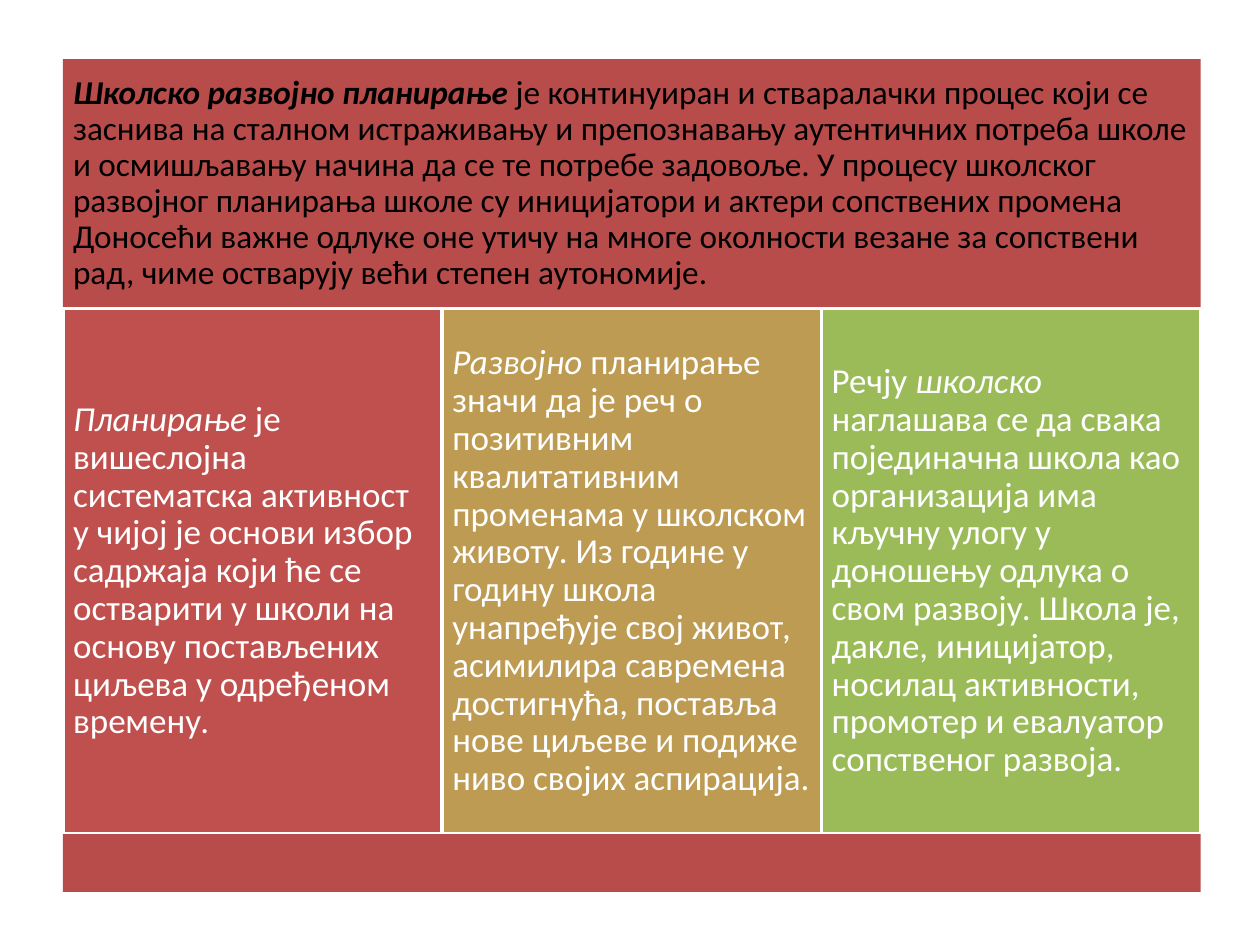
from pptx import Presentation
from pptx import util as u
from pptx.dml.color import RGBColor
from pptx.enum import shapes, text

BRICK = RGBColor(0xB7, 0x4C, 0x4A)
RED = RGBColor(0xC0, 0x50, 0x4D)
OCHRE = RGBColor(0xBD, 0x9B, 0x53)
GREEN = RGBColor(0x9B, 0xBB, 0x59)
WHITE = RGBColor(0xFF, 0xFF, 0xFF)
BLACK = RGBColor(0, 0, 0)

LEFT, TOP = 0.5, 0.47
COLUMN_WIDTH, COLUMN_HEIGHT = 3.01, 4.17
HEADER_HEIGHT, FOOTER_HEIGHT = 1.98, 0.46
PLAIN, ITALIC = {}, {"italic": True}
BOLD_ITALIC = {"bold": True, "italic": True}

DEFINITION = [
    ("Школско развојно планирање ", BOLD_ITALIC),
    ("је континуиран и стваралачки процес који се заснива на сталном "
     "истраживању и препознавању аутентичних потреба школе и осмишљавању "
     "начина да се те потребе задовоље. У процесу школског развојног "
     "планирања школе су иницијатори и актери сопствених промена Доносећи "
     "важне одлуке оне утичу на многе околности везане за сопствени рад, "
     "чиме остварују већи степен аутономије.", PLAIN),
]
TERMS = [
    (RED, [
        ("Планирање", ITALIC),
        (" је вишеслојна систематска активност у чијој је основи избор "
         "садржаја који ће се остварити у школи на основу постављених "
         "циљева у одређеном времену.", PLAIN)]),
    (OCHRE, [
        ("Развојно ", ITALIC),
        ("планирање значи да је реч о позитивним квалитативним променама у "
         "школском животу. Из године у годину школа унапређује свој живот, "
         "асимилира савремена достигнућа, поставља нове циљеве и подиже "
         "ниво својих аспирација.", PLAIN)]),
    (GREEN, [
        ("Речју ", PLAIN),
        ("школско ", ITALIC),
        ("наглашава се да свака појединачна школа као организација има "
         "кључну улогу у доношењу одлука о свом развоју. Школа је, дакле, "
         "иницијатор, носилац активности, промотер и евалуатор сопственог "
         "развоја.", PLAIN)]),
]


class PlanSlide:
    """Holds the text style and the current slide, and draws its panels."""

    font = {"name": "Calibri"}
    frame = {
        "word_wrap": True,
        "vertical_anchor": text.MSO_ANCHOR.MIDDLE,
        **{f"margin_{side}": u.Inches(0.08)
           for side in ("left", "top", "right", "bottom")},
    }
    paragraph = {"alignment": text.PP_ALIGN.LEFT, "line_spacing": 0.9}

    def __init__(self, slide):
        self.panels = slide.shapes.add_group_shape().shapes

    def apply(self, target, values):
        for name, value in values.items():
            setattr(target, name, value)

    def panel(self, left, top, width, height, fill, outlined=False):
        box = self.panels.add_shape(
            shapes.MSO_SHAPE.RECTANGLE,
            *(u.Inches(length) for length in (left, top, width, height)))
        box.shadow.inherit = False
        box.fill.solid()
        box.fill.fore_color.rgb = fill
        if outlined:
            box.line.color.rgb = WHITE
            box.line.width = u.Pt(2)
        else:
            box.line.fill.background()
        return box

    def add_text(self, box, passages, size, color):
        self.apply(box.text_frame, self.frame)
        paragraph = box.text_frame.paragraphs[0]
        self.apply(paragraph, self.paragraph)
        for words, emphasis in passages:
            run = paragraph.add_run()
            run.text = words
            self.apply(run.font, {**self.font, "size": u.Pt(size), **emphasis})
            run.font.color.rgb = color


def main():
    deck = Presentation()
    deck.slide_width, deck.slide_height = u.Inches(10), u.Inches(7.5)
    plan = PlanSlide(deck.slides.add_slide(deck.slide_layouts[6]))

    full_width = COLUMN_WIDTH * len(TERMS)
    columns_top = TOP + HEADER_HEIGHT
    header = plan.panel(LEFT, TOP, full_width, HEADER_HEIGHT, BRICK)
    plan.add_text(header, DEFINITION, 19, BLACK)
    for index, (fill, passages) in enumerate(TERMS):
        column = plan.panel(LEFT + index * COLUMN_WIDTH, columns_top,
                            COLUMN_WIDTH, COLUMN_HEIGHT, fill, outlined=True)
        plan.add_text(column, passages, 20, WHITE)
    plan.panel(LEFT, columns_top + COLUMN_HEIGHT, full_width, FOOTER_HEIGHT, BRICK)

    deck.save("out.pptx")


if __name__ == "__main__":
    main()
